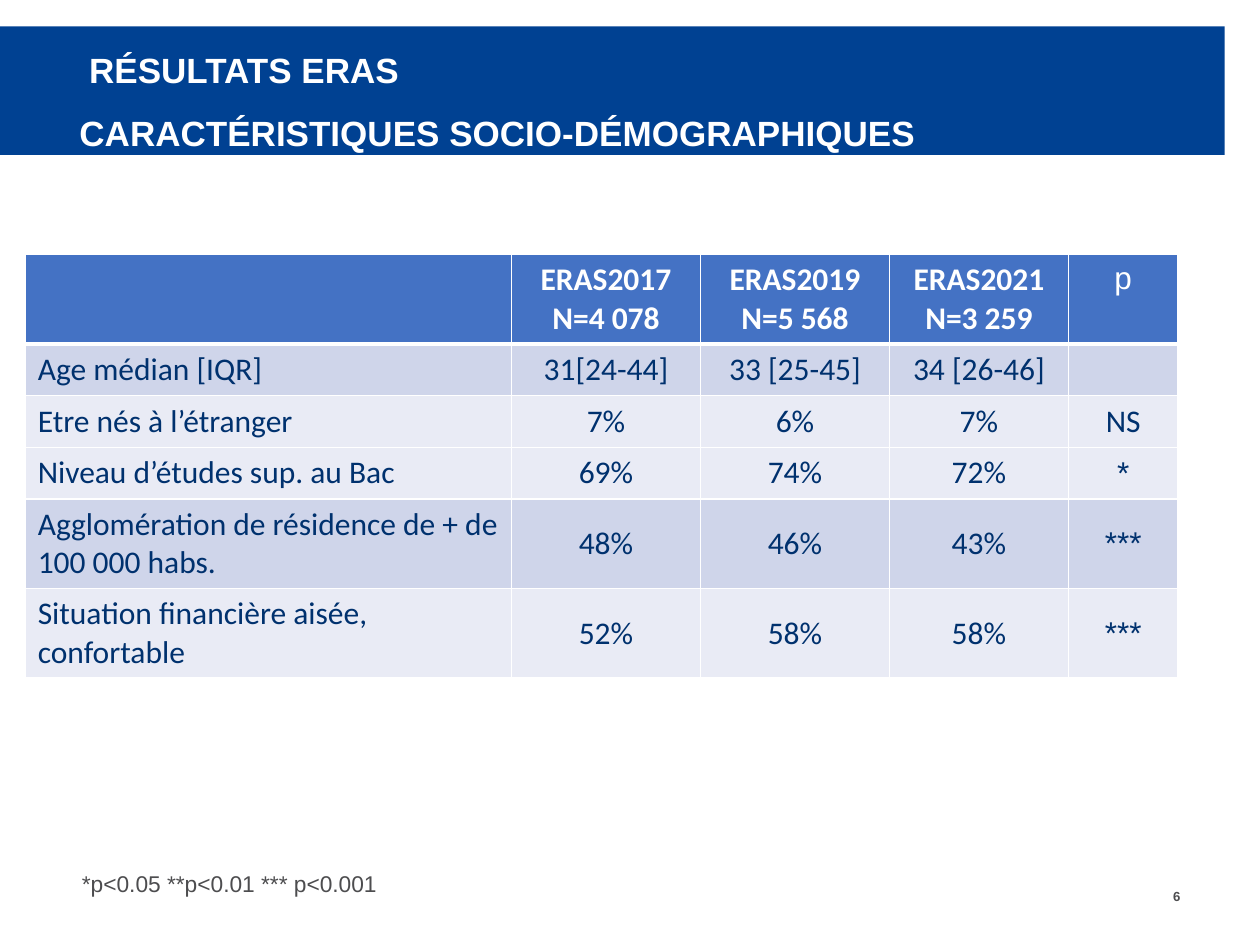
from typing import NamedTuple

from lxml.etree import SubElement
from pptx import Presentation
from pptx.dml.color import RGBColor
from pptx.enum.shapes import MSO_SHAPE
from pptx.enum.text import MSO_ANCHOR, MSO_AUTO_SIZE, PP_ALIGN
from pptx.oxml.ns import qn
from pptx.util import Inches, Pt

WHITE, NAVY, GREY = "FFFFFF", "00316E", "4D4D4F"
BAND, HEAD, DARK, LIGHT = "004192", "4472C4", "CFD5EA", "E9EBF5"


class Row(NamedTuple):
    cells: tuple
    fill: str
    high: float
    anchor: MSO_ANCHOR = MSO_ANCHOR.MIDDLE


COLS = (3.86, 1.5, 1.5, 1.42, 0.87)
ROWS = (
    Row(("", "ERAS2017\nN=4 078", "ERAS2019\nN=5 568", "ERAS2021\nN=3 259", "p"),
        HEAD, 0.7, MSO_ANCHOR.TOP),
    Row(("Age médian [IQR]", "31[24-44]", "33 [25-45]", "34 [26-46]", ""),
        DARK, 0.41, MSO_ANCHOR.TOP),
    Row(("Etre nés à l’étranger", "7%", "6%", "7%", "NS"), LIGHT, 0.41),
    Row(("Niveau d’études sup. au Bac", "69%", "74%", "72%", "*"), LIGHT, 0.41),
    Row(("Agglomération de résidence de + de 100 000 habs.",
         "48%", "46%", "43%", "***"), DARK, 0.7),
    Row(("Situation financière aisée, confortable",
         "52%", "58%", "58%", "***"), LIGHT, 0.7),
)


def paint(hue: str) -> RGBColor:
    return RGBColor.from_string(hue)


def write(frame, text: str, *, size: float, color: str, font: str = "Arial",
          bold: bool = False, align=PP_ALIGN.LEFT, space: float = 1.0) -> None:
    """Fill a text frame; a newline starts a paragraph, \\v breaks a line."""
    frame.text = text
    for para in frame.paragraphs:
        para.alignment, para.line_spacing = align, space
        for run in para.runs:
            run.font.name, run.font.size, run.font.bold = font, Pt(size), bold
            run.font.color.rgb = paint(color)


def inset(frame) -> None:
    frame.margin_left = frame.margin_right = Inches(0.04)
    frame.margin_top = frame.margin_bottom = 0


def label(slide, box: tuple, text: str, *, wrap: bool = True, **style) -> None:
    frame = slide.shapes.add_textbox(*map(Inches, box)).text_frame
    inset(frame)
    frame.word_wrap = wrap
    frame.auto_size = MSO_AUTO_SIZE.SHAPE_TO_FIT_TEXT
    write(frame, text, **style)


def edge(cell, **widths: float) -> None:
    """Draw white cell borders; lines must come before the fill."""
    props = cell._tc.get_or_add_tcPr()
    for side, width in widths.items():
        line = SubElement(props, qn(f"a:ln{side}"), w=str(Pt(width)))
        fill = SubElement(line, qn("a:solidFill"))
        SubElement(fill, qn("a:srgbClr"), val=WHITE)


def add_grid(slide) -> None:
    high = sum(row.high for row in ROWS)
    box = map(Inches, (0.2, 2.02, sum(COLS), high))
    grid = slide.shapes.add_table(len(ROWS), len(COLS), *box).table
    for col, wide in zip(grid.columns, COLS):
        col.width = Inches(wide)
    for r, row in enumerate(ROWS):
        grid.rows[r].height = Inches(row.high)
        for c, text in enumerate(row.cells):
            cell, top = grid.cell(r, c), r == 0
            edge(cell, L=1, R=1, T=3 if r == 1 else 1, B=3 if top else 1)
            cell.fill.solid()
            cell.fill.fore_color.rgb = paint(row.fill)
            cell.vertical_anchor = row.anchor if c else MSO_ANCHOR.TOP
            arial = text == "p" or text.startswith("*")
            write(cell.text_frame, text, size=18,
                  font="Arial" if arial else "Calibri",
                  color=WHITE if top else NAVY, bold=top and text != "p",
                  align=PP_ALIGN.CENTER if c else PP_ALIGN.LEFT)


def main() -> None:
    deck = Presentation()
    deck.slide_width, deck.slide_height = Inches(10), Inches(7.5)
    slide = deck.slides.add_slide(deck.slide_layouts[5])
    title = slide.shapes.title

    # Blue band, placed behind the title
    band = slide.shapes.add_shape(
        MSO_SHAPE.RECTANGLE, *map(Inches, (0, 0.21, 9.72, 1.02)))
    band.shadow.inherit = False
    band.fill.solid()
    band.fill.fore_color.rgb = paint(BAND)
    band.line.fill.background()
    title._element.addprevious(band._element)

    # Title
    title.left, title.top, title.width, title.height = map(
        Inches, (0.59, 0.21, 7.48, 1.02))
    frame = title.text_frame
    inset(frame)
    frame.word_wrap, frame.auto_size = True, MSO_AUTO_SIZE.NONE
    frame.vertical_anchor = MSO_ANCHOR.MIDDLE
    write(frame, " RÉSULTATS ERAS\vCARACTÉRISTIQUES SOCIO-DÉMOGRAPHIQUES",
          size=20, color=WHITE, bold=True, space=1.5)

    # Table, key to the p values and page number
    add_grid(slide)
    label(slide, (0.61, 6.9, 2.68, 0.22), "*p<0.05 **p<0.01 *** p<0.001",
          size=13, color=GREY)
    label(slide, (9.14, 7.05, 0.27, 0.13), "6", wrap=False, size=7.5,
          color=GREY, bold=True, align=PP_ALIGN.RIGHT)
    deck.save("out.pptx")


if __name__ == "__main__":
    main()
